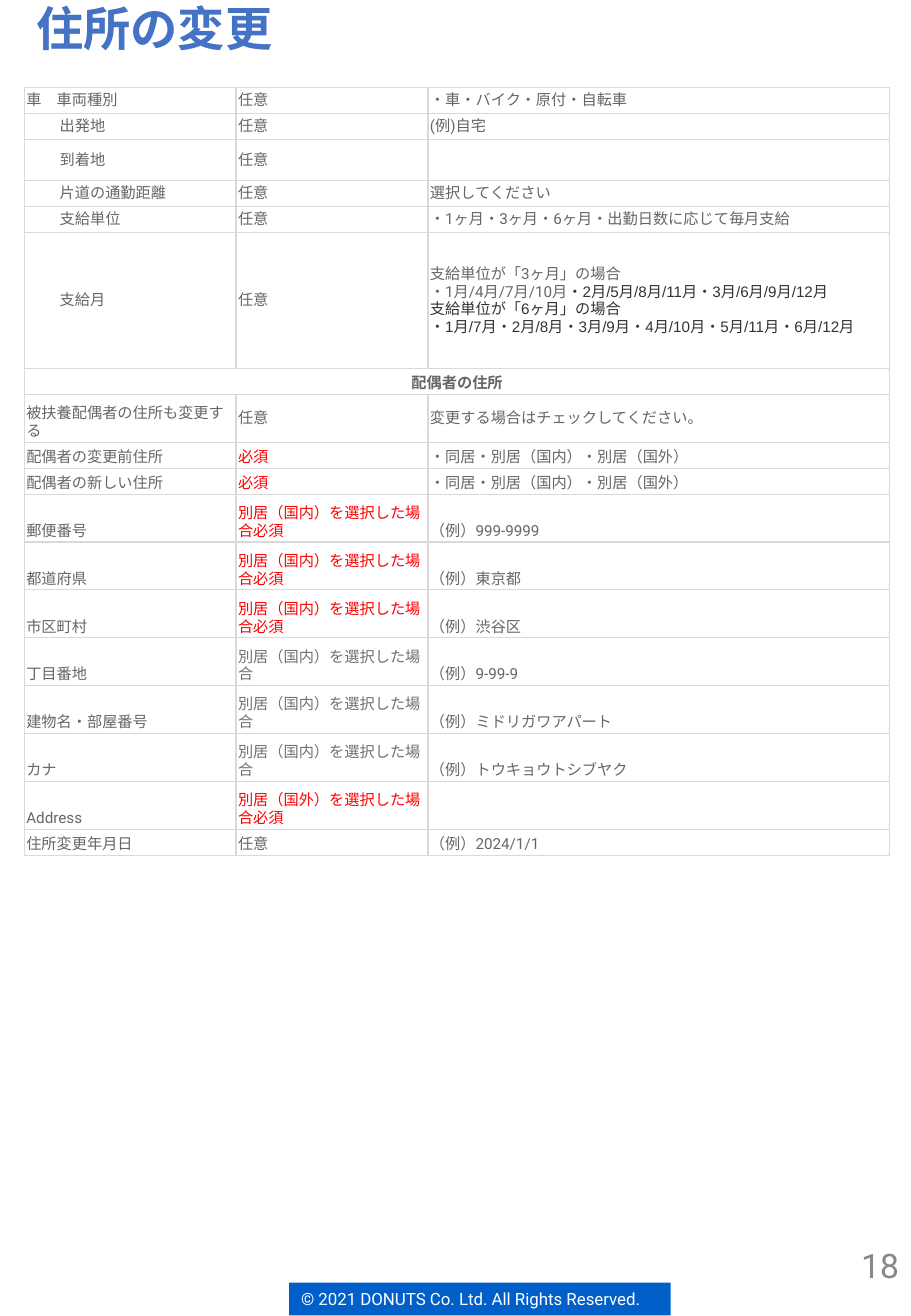
from pptx import Presentation
from pptx.dml.color import RGBColor
from pptx.enum.shapes import MSO_SHAPE
from pptx.enum.text import MSO_ANCHOR, MSO_AUTO_SIZE, PP_ALIGN
from pptx.oxml import parse_xml
from pptx.oxml.ns import nsdecls
from pptx.util import Pt

MIDDLE, BOTTOM = MSO_ANCHOR.MIDDLE, MSO_ANCHOR.BOTTOM
LEFT, CENTER, RIGHT = PP_ALIGN.LEFT, PP_ALIGN.CENTER, PP_ALIGN.RIGHT
NO_FIT = MSO_AUTO_SIZE.NONE
RECTANGLE = MSO_SHAPE.RECTANGLE

WHITE = RGBColor(0xFF, 0xFF, 0xFF)
TITLE_BLUE = RGBColor(0x44, 0x72, 0xC4)
FOOTER_BLUE = RGBColor(0x00, 0x5F, 0xC8)
NUMBER_GRAY = RGBColor(0x88, 0x88, 0x88)
TEXT_GRAY = RGBColor(0x66, 0x66, 0x66)
OPTION_GRAY = RGBColor(0x75, 0x70, 0x70)
DARK = RGBColor(0x33, 0x33, 0x33)
RED = RGBColor(0xFF, 0x00, 0x00)
BORDER = RGBColor(0xD9, 0xD9, 0xD9)

# Content
TITLE = "住所の変更"
PAGE_NUMBER = "18"
FOOTER = "© 2021 DONUTS Co. Ltd. All Rights Reserved."
DOMESTIC = "別居（国内）を選択した場合"
RESIDENCE = "・同居・別居（国内）・別居（国外）"

# Each line is a list of (text, font, colour) runs
PAYMENT_MONTHS = [
    [("支給単位が「3ヶ月」の場合", "Roboto", TEXT_GRAY)],
    [("・1月/4月/7月/10月", "Roboto", TEXT_GRAY),
     ("・2月/5月/8月/11月・3月/6月/9月/12月", "Arial", DARK)],
    [("支給単位が「6ヶ月」の場合", "Arial", DARK)],
    [("・1月/7月・2月/8月・3月/9月・4月/10月・5月/11月・6月/12月", "Arial", DARK)],
]

# Row height, item, requirement, entry
ONE_LINE, TWO_LINES, EMPTY_ENTRY, SIX_LINES = 15.4, 28.4, 22.5, 80.6
COMMUTE_ROWS = [
    (ONE_LINE, "車　車両種別", "任意", "・車・バイク・原付・自転車"),
    (ONE_LINE, "出発地", "任意", "(例)自宅"),
    (EMPTY_ENTRY, "到着地", "任意", ""),
    (ONE_LINE, "片道の通勤距離", "任意", "選択してください"),
    (ONE_LINE, "支給単位", "任意", "・1ヶ月・3ヶ月・6ヶ月・出勤日数に応じて毎月支給"),
    (SIX_LINES, "支給月", "任意", PAYMENT_MONTHS),
]
SECTION_ROW = (ONE_LINE, "配偶者の住所", "", "")
CHECK_ROW = (TWO_LINES, "被扶養配偶者の住所も変更する", "任意",
             "変更する場合はチェックしてください。")
SPOUSE_ROWS = [
    (ONE_LINE, "配偶者の変更前住所", "必須", RESIDENCE),
    (ONE_LINE, "配偶者の新しい住所", "必須", RESIDENCE),
    (TWO_LINES, "郵便番号", DOMESTIC + "必須", "（例）999-9999"),
    (TWO_LINES, "都道府県", DOMESTIC + "必須", "（例）東京都"),
    (TWO_LINES, "市区町村", DOMESTIC + "必須", "（例）渋谷区"),
    (TWO_LINES, "丁目番地", DOMESTIC, "（例）9-99-9"),
    (TWO_LINES, "建物名・部屋番号", DOMESTIC, "（例）ミドリガワアパート"),
    (TWO_LINES, "カナ", DOMESTIC, "（例）トウキョウトシブヤク"),
    (TWO_LINES, "Address", "別居（国外）を選択した場合必須", ""),
    (ONE_LINE, "住所変更年月日", "任意", "（例）2024/1/1"),
]
ROWS = COMMUTE_ROWS + [SECTION_ROW, CHECK_ROW] + SPOUSE_ROWS
SECTION_INDEX = len(COMMUTE_ROWS)
CHECK_INDEX = SECTION_INDEX + 1

# Layout in points
SLIDE_WIDTH, SLIDE_HEIGHT = 540, 780
TITLE_BOX = (14.4, 0, 346.3, 36.7)
NUMBER_BOX = (418.3, 728.6, 121.7, 41.8)
FOOTER_BOX = (171.4, 760.3, 226.1, 19.4)
TABLE_LEFT, TABLE_TOP = 14.4, 51.8
COLUMN_WIDTHS = (125.5, 113.8, 273.7)
CELL_MARGIN, ITEM_INDENT = 1.2, 19.8
BODY_SIZE = 9


def set_font(font, size, color, name="Roboto", bold=False):
    font.size, font.bold, font.name = Pt(size), bold, name
    font.color.rgb = color
    font._rPr.append(parse_xml(f'<a:ea {nsdecls("a")} typeface="{name}"/>'))


def write_text(shape, text, size, color, align=LEFT, bold=False):
    frame = shape.text_frame
    frame.word_wrap, frame.auto_size = True, NO_FIT
    frame.vertical_anchor = MIDDLE
    frame.margin_left = frame.margin_right = Pt(7.2)
    frame.margin_top = frame.margin_bottom = Pt(3.6)
    paragraph = frame.paragraphs[0]
    paragraph.text, paragraph.alignment = text, align
    set_font(paragraph.font, size, color, bold=bold)
    return paragraph


def add_borders(cell):
    for side in ("lnL", "lnR", "lnT", "lnB"):
        cell._tc.get_or_add_tcPr().append(parse_xml(
            f'<a:{side} {nsdecls("a")} w="{Pt(0.75)}"><a:solidFill>'
            f'<a:srgbClr val="{BORDER}"/></a:solidFill></a:{side}>'))


def write_cell(cell, lines, bold=False, align=LEFT):
    frame = cell.text_frame
    for index, runs in enumerate(lines):
        paragraph = frame.add_paragraph() if index else frame.paragraphs[0]
        paragraph.alignment = align
        for text, name, color in runs:
            run = paragraph.add_run()
            run.text = text
            if len(runs) > 1:
                set_font(run.font, BODY_SIZE, color, name)
        if len(runs) == 1:
            set_font(paragraph.font, BODY_SIZE, color, name, bold)


def requirement_color(text):
    if text.endswith("必須"):
        return RED
    return OPTION_GRAY if text == DOMESTIC else TEXT_GRAY


presentation = Presentation()
presentation.slide_width, presentation.slide_height = Pt(SLIDE_WIDTH), Pt(SLIDE_HEIGHT)
slide = presentation.slides.add_slide(presentation.slide_layouts[5])

# Footer band and page number
footer = slide.shapes.add_shape(RECTANGLE, *map(Pt, FOOTER_BOX))
footer.shadow.inherit = False
footer.fill.solid()
footer.fill.fore_color.rgb = FOOTER_BLUE
footer.line.fill.background()
write_text(footer, FOOTER, 10, WHITE)
page_number = slide.shapes.add_textbox(*map(Pt, NUMBER_BOX))
write_text(page_number, PAGE_NUMBER, 20, NUMBER_GRAY, RIGHT)

# Title
title = slide.shapes.title
title.left, title.top, title.width, title.height = map(Pt, TITLE_BOX)
write_text(title, TITLE, 28, TITLE_BLUE, bold=True).line_spacing = 0.9

# Address table
table = slide.shapes.add_table(
    len(ROWS), len(COLUMN_WIDTHS), Pt(TABLE_LEFT), Pt(TABLE_TOP),
    Pt(sum(COLUMN_WIDTHS)), Pt(sum(row[0] for row in ROWS))).table
table.first_row = table.horz_banding = False
for column, width in zip(table.columns, COLUMN_WIDTHS):
    column.width = Pt(width)

for row_index, (height, *texts) in enumerate(ROWS):
    table.rows[row_index].height = Pt(height)
    is_section = row_index == SECTION_INDEX
    for column_index, content in enumerate(texts):
        cell = table.cell(row_index, column_index)
        add_borders(cell)
        cell.fill.solid()
        cell.fill.fore_color.rgb = WHITE
        is_indented = column_index == 0 and 0 < row_index < SECTION_INDEX
        cell.margin_left = Pt(CELL_MARGIN + ITEM_INDENT * is_indented)
        cell.margin_right = cell.margin_top = cell.margin_bottom = Pt(CELL_MARGIN)
        is_middle = row_index < SECTION_INDEX or (
            row_index == CHECK_INDEX and column_index > 0)
        cell.vertical_anchor = MIDDLE if is_middle else BOTTOM
        if not content:
            continue
        color = requirement_color(content) if column_index == 1 else TEXT_GRAY
        lines = content if isinstance(content, list) else [[(content, "Roboto", color)]]
        write_cell(cell, lines, is_section, CENTER if is_section else LEFT)
table.cell(SECTION_INDEX, 0).merge(table.cell(SECTION_INDEX, len(COLUMN_WIDTHS) - 1))

presentation.save("out.pptx")
